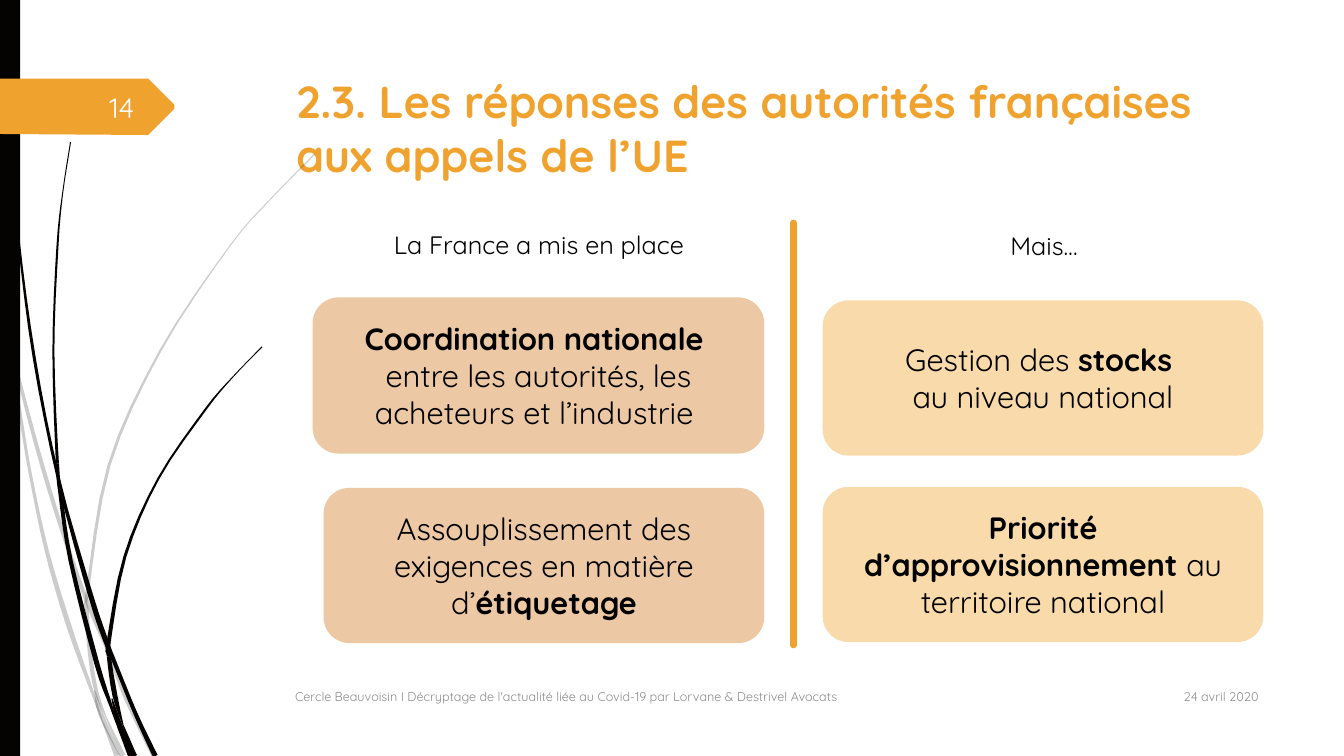
from lxml import etree
from pptx import Presentation
from pptx.dml.color import RGBColor
from pptx.enum import shapes, text
from pptx.oxml.ns import qn
from pptx.util import Inches, Pt

# Content
FONT = "Quicksand"
ORANGE, INK, MUTED = "F0A22E", "040302", "8C8C8C"
PEACH, SAND, BLACK, WHITE = "ECC8A4", "F9DAAB", "000000", "FEFFFF"
LEFT, CENTER, RIGHT = text.PP_ALIGN.LEFT, text.PP_ALIGN.CENTER, text.PP_ALIGN.RIGHT
TOP, MIDDLE = text.MSO_ANCHOR.TOP, text.MSO_ANCHOR.MIDDLE

TITLE = "2.3. Les réponses des autorités françaises aux appels de l’UE"

# Cards: position, fill, paragraphs made of (text, bold) runs
CARDS = [
    ((8.16, 4.83, 4.37, 1.54), SAND,
     [[("Priorité d’approvisionnement ", True), ("au territoire national", False)]]),
    ((3.21, 4.84, 4.37, 1.54), PEACH,
     [[("Assouplissement des exigences en matière d’", False), ("étiquetage", True)]]),
    ((3.1, 2.95, 4.48, 1.55), PEACH,
     [[("Coordination nationale ", True)],
      [("entre les autorités, les acheteurs et l’industrie ", False)]]),
    ((8.16, 2.98, 4.37, 1.54), SAND,
     [[("Gestion des ", False), ("stocks ", True)], [("au niveau national", False)]]),
]

# Labels: text, position, size, colour, alignment, anchor
LABELS = [
    ("Cercle Beauvoisin I Décryptage de l'actualité liée au Covid-19 "
     "par Lorvane & Destrivel Avocats", (2.83, 6.71, 8.33, 0.4), 9, MUTED, LEFT, MIDDLE),
    ("14", (0.58, 0.86, 0.85, 0.4), 20, WHITE, RIGHT, MIDDLE),
    ("24 avril 2020", (11.33, 6.7, 1.25, 0.41), 9, MUTED, RIGHT, MIDDLE),
    ("La France a mis en place", (3.36, 2.23, 3.97, 0.4), 18, BLACK, CENTER, TOP),
    ("Mais…", (8.37, 2.24, 3.97, 0.4), 18, BLACK, CENTER, TOP),
]

# Grass blades: opacity %, points where the blade is cut into sections,
# then (x, y, thickness) along the centre line
BLADES = [
    (20, [1, 4], [
        (0, 2.9, .04), (.12, 3.48, .03), (.36, 4.41, .04), (.6, 5.21, .04),
        (.86, 5.96, .04), (1.08, 6.47, .04), (1.25, 6.93, .04), (1.53, 7.5, .05)]),
    (20, [], [
        (.11, 3.5, .01), (.2, 4.1, .03), (.3, 4.7, .03), (.46, 5.45, .04),
        (.68, 6.2, .05), (.92, 6.88, .03), (1.01, 7.14, .01)]),
    (20, [5, 6], [
        (3.12, 1.53, .01), (2.68, 1.98, .01), (2.28, 2.44, .01), (1.59, 3.48, .02),
        (1.08, 4.62, .03), (.87, 5.85, .03), (.86, 6.05, .04), (.89, 6.46, .04),
        (.95, 6.84, .04), (1.05, 7.11, .01)]),
    (20, [], [(1.01, 7.14, .01), (1.16, 7.5, .05)]),
    (20, [], [(.94, 6.85, .01), (1, 7.08, .05), (1.19, 7.5, .01)]),
    (20, [], [(1.05, 7.11, .01), (1.22, 7.5, .05)]),
    (100, [4, 6], [
        (.04, 0, .01), (.08, 1.1, .01), (.18, 2.33, .02), (.34, 3.55, .03),
        (.58, 4.75, .03), (.9, 5.91, .05), (1.07, 6.41, .05), (1.12, 6.53, .04),
        (1.34, 7.07, .04), (1.54, 7.5, .05)]),
    (100, [4, 5], [
        (.7, 1.41, .01), (.62, 1.93, .01), (.57, 2.45, .02), (.53, 3.49, .02),
        (.57, 4.6, .03), (.6, 4.9, .04), (.7, 5.56, .04), (.96, 6.58, .05),
        (1.1, 7, .03), (1.17, 7.22, .01)]),
    (100, [5, 6], [
        (2.6, 3.44, .01), (2.31, 3.74, .01), (2.04, 4.06, .02), (1.57, 4.75, .02),
        (1.24, 5.52, .03), (1.08, 6.36, .04), (1.08, 6.51, .04), (1.14, 6.9, .05),
        (1.22, 7.19, .01)]),
    (100, [], [(1.17, 7.22, .01), (1.29, 7.5, .04)]),
    (100, [], [(1.11, 6.93, .01), (1.19, 7.2, .05), (1.32, 7.5, .03)]),
    (100, [], [(1.22, 7.19, .01), (1.34, 7.5, .04)]),
]
STEPS = 4
TAG = [(0, .78), (1.47, .78), (1.73, 1.04), (1.73, 1.08), (1.47, 1.34), (0, 1.33)]


def color(value):
    return RGBColor.from_string(value)


def box(values):
    return [Inches(v) for v in values]


def paint(sp, fill, opacity=100):
    sp.shadow.inherit = False
    sp.fill.solid()
    sp.fill.fore_color.rgb = color(fill)
    sp.line.fill.background()
    if opacity < 100:
        tint = sp._element.spPr.find(".//" + qn("a:srgbClr"))
        etree.SubElement(tint, qn("a:alpha")).set("val", str(opacity * 1000))


def style(p, size, tint, align=LEFT):
    p.alignment = align
    p.font.name, p.font.size = FONT, Pt(size)
    p.font.color.rgb = color(tint)


def add_outline(s, points, fill, opacity=100):
    mils = [(round(x * 1000), round(y * 1000)) for x, y in points]
    builder = s.shapes.build_freeform(*mils[0], scale=Inches(1) / 1000)
    builder.add_line_segments(mils[1:], close=True)
    paint(builder.convert_to_shape(), fill, opacity)


def smooth(points):
    """Catmull-Rom curve through the points, thickness included."""
    pts = [points[0], *points, points[-1]]
    curve = []
    for a, b, c, d in zip(pts, pts[1:], pts[2:], pts[3:]):
        for i in range(STEPS):
            t = i / STEPS
            curve.append([
                (2 * q + (r - o) * t + (2 * o - 5 * q + 4 * r - s) * t ** 2
                 + (3 * q - o - 3 * r + s) * t ** 3) / 2
                for o, q, r, s in zip(a, b, c, d)])
    return curve + [list(points[-1])]


def add_blade(s, opacity, cuts, points):
    curve = smooth(points)
    left, right = [], []
    for i, (x, y, width) in enumerate(curve):
        before, after = curve[max(i - 1, 0)], curve[min(i + 1, len(curve) - 1)]
        dx, dy = after[0] - before[0], after[1] - before[1]
        half = width / 2 / (dx * dx + dy * dy) ** 0.5
        left.append((x - dy * half, y + dx * half))
        right.append((x + dy * half, y - dx * half))
    ends = [0, *cuts, len(points) - 1]
    for first, last in zip(ends, ends[1:]):
        part = slice(first * STEPS, last * STEPS + 1)
        add_outline(s, left[part] + right[part][::-1], INK, opacity)


prs = Presentation()
prs.slide_width, prs.slide_height = Inches(13.33), Inches(7.5)
s = prs.slides.add_slide(prs.slide_layouts[5])

# Left decoration and page tag
for blade in BLADES:
    add_blade(s, *blade)
paint(s.shapes.add_shape(shapes.MSO_SHAPE.RECTANGLE, *box((0, 0, 0.2, 7.5))), INK)
add_outline(s, TAG, ORANGE)

# Title
title = s.shapes.title
title.left, title.top, title.width, title.height = box((2.84, 0.68, 9.75, 1.4))
tf = title.text_frame
tf.text = TITLE
tf.vertical_anchor = TOP
style(tf.paragraphs[0], 32, ORANGE)
tf.paragraphs[0].font.bold = True

# Cards
for place, fill, paragraphs in CARDS:
    sp = s.shapes.add_shape(shapes.MSO_SHAPE.ROUNDED_RECTANGLE, *box(place))
    paint(sp, fill)
    tf = sp.text_frame
    tf.vertical_anchor = MIDDLE
    for i, runs in enumerate(paragraphs):
        p = tf.add_paragraph() if i else tf.paragraphs[0]
        style(p, 22, BLACK, CENTER)
        for words, bold in runs:
            r = p.add_run()
            r.text, r.font.bold = words, bold

# Column divider
divider = s.shapes.add_connector(
    shapes.MSO_CONNECTOR.STRAIGHT, *box((7.87, 2.21, 7.87, 6.4)))
divider.line.color.rgb = color(ORANGE)
divider.line.width = Pt(4.5)
divider.line._get_or_add_ln().set("cap", "rnd")
etree.SubElement(divider._element.spPr, qn("a:effectLst"))

# Footer, page number and column headings
for words, place, size, tint, align, anchor in LABELS:
    tf = s.shapes.add_textbox(*box(place)).text_frame
    tf.word_wrap = True
    tf.vertical_anchor = anchor
    tf.text = words
    style(tf.paragraphs[0], size, tint, align)

prs.save("out.pptx")
